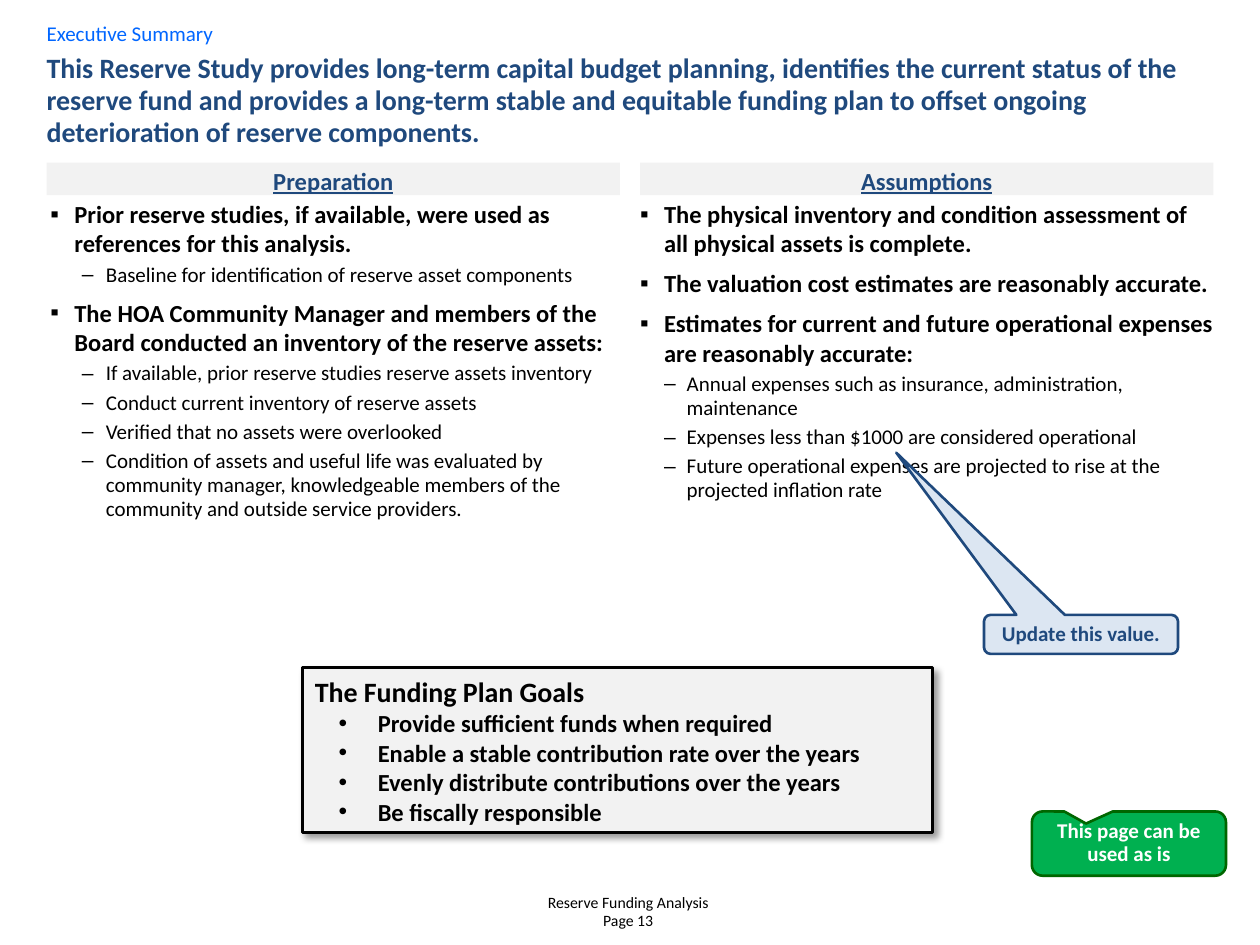
from lxml import etree
from pptx import Presentation
from pptx.dml.color import RGBColor
from pptx.enum.shapes import MSO_SHAPE
from pptx.enum.text import MSO_ANCHOR, MSO_AUTO_SIZE, PP_ALIGN
from pptx.oxml.ns import qn
from pptx.util import Inches, Pt

RECTANGLE, CALLOUT = MSO_SHAPE.RECTANGLE, MSO_SHAPE.ROUNDED_RECTANGULAR_CALLOUT
TOP, MIDDLE, BOTTOM = MSO_ANCHOR.TOP, MSO_ANCHOR.MIDDLE, MSO_ANCHOR.BOTTOM
LEFT, CENTER = PP_ALIGN.LEFT, PP_ALIGN.CENTER
FIT_SHAPE = MSO_AUTO_SIZE.SHAPE_TO_FIT_TEXT
FONT, BLACK, NAVY, GRAY = "Calibri", "000000", "1F497D", "F2F2F2"

# Content: (level, text)
SECTION = "Executive Summary"
TITLE = ("This Reserve Study provides long-term capital budget planning, identifies the "
         "current status of the reserve fund and provides a long-term stable and equitable "
         "funding plan to offset ongoing deterioration of reserve components.")
PREPARATION = [
    (0, "Prior reserve studies, if available, were used as references for this analysis."),
    (1, "Baseline for identification of reserve asset components"),
    (0, "The HOA Community Manager and members of the Board conducted an inventory of the "
        "reserve assets:"),
    (1, "If available, prior reserve studies reserve assets inventory"),
    (1, "Conduct current inventory of reserve assets"),
    (1, "Verified that no assets were overlooked"),
    (1, "Condition of assets and useful life was evaluated by community manager, "
        "knowledgeable members of the community and outside service providers."),
]
ASSUMPTIONS = [
    (0, "The physical inventory and condition assessment of all physical assets is complete."),
    (0, "The valuation cost estimates are reasonably accurate."),
    (0, "Estimates for current and future operational expenses are reasonably accurate:"),
    (1, "Annual expenses such as insurance, administration, maintenance"),
    (1, "Expenses less than $1000 are considered operational"),
    (1, "Future operational expenses are projected to rise at the projected inflation rate"),
]
GOALS_TITLE = "The Funding Plan Goals"
GOALS = ["Provide sufficient funds when required",
         "Enable a stable contribution rate over the years",
         "Evenly distribute contributions over the years",
         "Be fiscally responsible"]
FOOTER = ["Reserve Funding Analysis", "Page 13"]

# Grid: two equal columns between the margins
SLIDE_WIDTH, SLIDE_HEIGHT = 10, 7.5
MARGIN, GUTTER = 0.37, 0.16
CONTENT_WIDTH = SLIDE_WIDTH - 2 * MARGIN
COLUMN_WIDTH = (CONTENT_WIDTH - GUTTER) / 2
HEADER_TOP, HEADER_HEIGHT, LIST_TOP, LIST_HEIGHT = 1.29, 0.26, 1.58, 5.46
# (heading, items, left shift of the list, indent and hang of level 1)
COLUMNS = [("Preparation", PREPARATION, 0.03, (0.44, 0.19)),
           ("Assumptions", ASSUMPTIONS, 0, (0.37, 0.18))]
# (text, box, tail, fill, line colour, text colour)
CALLOUTS = [
    ("This page can be used as is", (8.19, 6.44, 1.54, 0.51), (-0.221, -0.311),
     "00B050", "006600", "FFFFFF"),
    ("Update this value.", (7.81, 4.88, 1.54, 0.31), (-0.952, -4.655),
     "DCE6F2", NAVY, NAVY),
]


def color(value):
    return RGBColor.from_string(value)


def set_frame(shape, anchor=TOP, inset=True, auto_size=None):
    frame = shape.text_frame
    frame.word_wrap = True
    frame.vertical_anchor = anchor
    if auto_size is not None:
        frame.auto_size = auto_size
    if not inset:
        frame.margin_left = frame.margin_top = frame.margin_right = frame.margin_bottom = 0
    return shape


def add_text(slide, box, **frame_options):
    return set_frame(slide.shapes.add_textbox(*map(Inches, box)), **frame_options)


def add_block(slide, kind, box, fill, line=None, **frame_options):
    shape = slide.shapes.add_shape(kind, *map(Inches, box))
    shape.shadow.inherit = False
    shape.fill.solid()
    shape.fill.fore_color.rgb = color(fill)
    if line:
        shape.line.color.rgb = color(line)
        shape.line.width = Pt(1.5)
    else:
        shape.line.fill.background()
    return set_frame(shape, **frame_options)


def write(shape, text, size, ink=BLACK, bold=False, underline=False, align=LEFT,
          spacing=None, before=0, bullet=None, indent=(0, 0), level=0):
    """Add one paragraph, using the empty first one if there is nothing yet."""
    frame = shape.text_frame
    paragraph = frame.add_paragraph() if frame.text else frame.paragraphs[0]
    paragraph.alignment, paragraph.level = align, level
    paragraph.space_before = Pt(before)
    if spacing:
        paragraph.line_spacing = spacing
    if bullet:
        properties = paragraph._p.get_or_add_pPr()
        left, hang = indent
        properties.set("marL", str(Inches(left)))
        properties.set("indent", str(-Inches(hang)))
        bullet_color = etree.SubElement(properties, qn("a:buClr"))
        etree.SubElement(bullet_color, qn("a:srgbClr"), val=BLACK)
        etree.SubElement(properties, qn("a:buFont"), typeface="Arial")
        etree.SubElement(properties, qn("a:buChar"), char=bullet)
    run = paragraph.add_run()
    run.text = text
    font = run.font
    font.name, font.size, font.bold, font.underline = FONT, Pt(size), bold, underline
    font.color.rgb = color(ink)


def add_shadow(shape, blur, distance, degrees, opacity):
    effects = shape._element.spPr.find(qn("a:effectLst"))
    shadow = etree.SubElement(effects, qn("a:outerShdw"), blurRad=str(Pt(blur)),
                              dist=str(Pt(distance)), dir=str(degrees * 60000),
                              algn="tl", rotWithShape="0")
    shade = etree.SubElement(shadow, qn("a:srgbClr"), val=BLACK)
    etree.SubElement(shade, qn("a:alpha"), val=str(opacity * 1000))


presentation = Presentation()
presentation.slide_width = Inches(SLIDE_WIDTH)
presentation.slide_height = Inches(SLIDE_HEIGHT)
slide = presentation.slides.add_slide(presentation.slide_layouts[6])

# Footer
footer = add_text(slide, (1.84, 7.05, 6.29, 0.39), auto_size=FIT_SHAPE)
for line in FOOTER:
    write(footer, line, 9, align=CENTER, spacing=0.95)

# Columns with a heading bar and a two-level list
for index, (heading, items, shift, sub_indent) in enumerate(COLUMNS):
    left = MARGIN + index * (COLUMN_WIDTH + GUTTER)
    bar = add_block(slide, RECTANGLE, (left, HEADER_TOP, COLUMN_WIDTH, HEADER_HEIGHT), GRAY,
                    anchor=BOTTOM, inset=False)
    write(bar, heading, 14, NAVY, bold=True, underline=True, align=CENTER, before=6)
    body = add_text(slide, (left + shift, LIST_TOP, COLUMN_WIDTH - shift, LIST_HEIGHT),
                    inset=False)
    for level, text in items:
        if level == 0:
            write(body, text, 14, bold=True, before=6, bullet="▪", indent=(0.19, 0.19))
        else:
            write(body, text, 12, spacing=0.95, before=3, bullet="–", indent=sub_indent,
                  level=1)

# Title and section label
title = add_text(slide, (MARGIN, 0.42, CONTENT_WIDTH, 0.83), inset=False)
write(title, TITLE, 16, NAVY, bold=True, spacing=0.95)
section = add_text(slide, (MARGIN, 0.16, CONTENT_WIDTH, 0.26), inset=False)
write(section, SECTION, 12, "0066FF", before=6)

# Goals box
goals_box = add_block(slide, RECTANGLE, (2.4, 5.3, 5, 1.31), GRAY, BLACK,
                      anchor=MIDDLE, auto_size=FIT_SHAPE)
add_shadow(goals_box, blur=4, distance=3, degrees=45, opacity=40)
write(goals_box, GOALS_TITLE, 16, bold=True)
for goal in GOALS:
    write(goals_box, goal, 14, bold=True, bullet="•", indent=(0.5, 0.31), level=1)

# Callouts
for text, box, tail, fill, line, ink in CALLOUTS:
    callout = add_block(slide, CALLOUT, box, fill, line, auto_size=FIT_SHAPE)
    callout.adjustments[0], callout.adjustments[1] = tail
    write(callout, text, 12, ink, bold=True, align=CENTER, spacing=0.9)

presentation.save("out.pptx")
